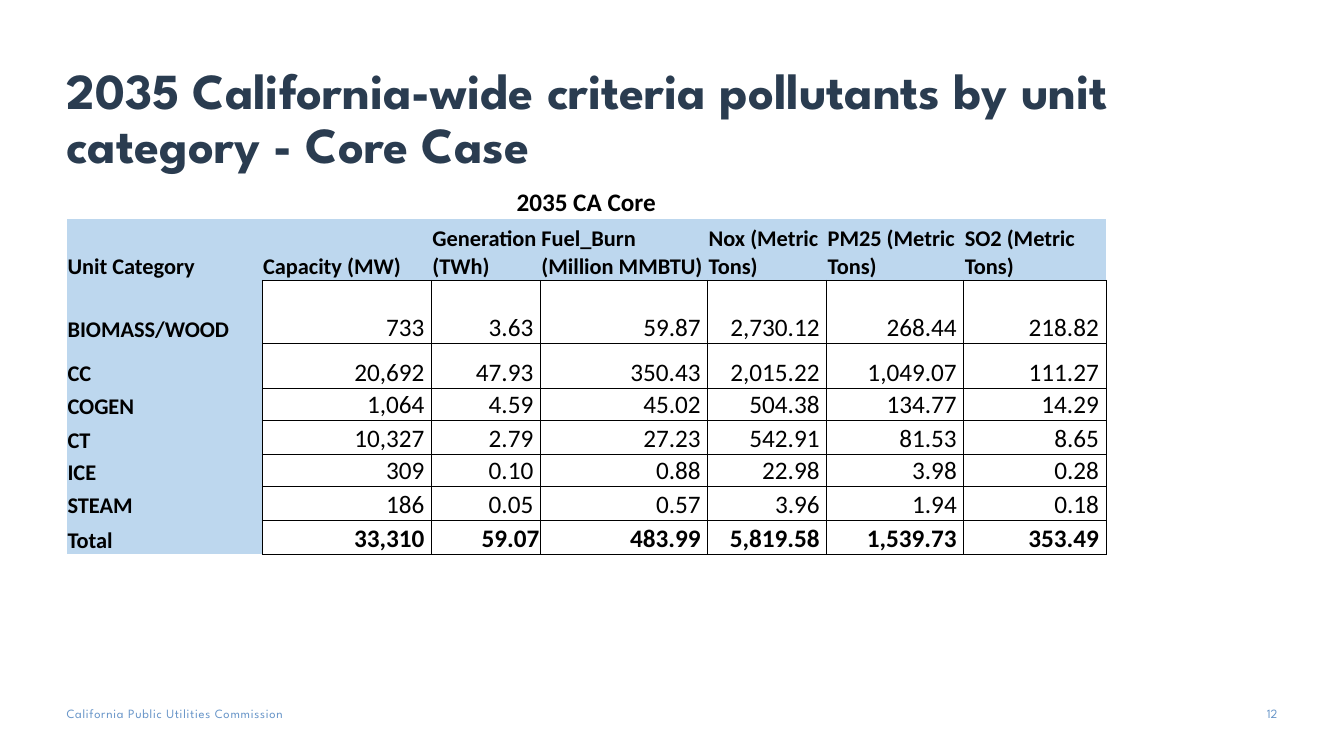
from dataclasses import dataclass

from lxml import etree
from pptx import Presentation
from pptx.dml.color import RGBColor
from pptx.enum import text as t
from pptx.oxml import ns
from pptx.util import Inches, Pt


@dataclass(frozen=True)
class Theme:
    heading_font: str = "League Spartan"
    table_font: str = "Calibri"
    navy: str = "2A3C50"
    footer_blue: str = "6996C9"
    header_blue: str = "BDD7EE"
    black: str = "000000"
    title_size: int = 36
    value_size: int = 18
    label_size: int = 16
    footer_size: int = 9
    border_width: float = 0.5


theme = Theme()


def style(para, name, size, color, bold=False):
    para.font.name = name
    para.font.size = Pt(size)
    para.font.bold = bold
    para.font.color.rgb = RGBColor.from_string(color)


def add_borders(cell):
    """Draw a thin line on all four sides; call before the cell is filled."""
    properties = cell._tc.get_or_add_tcPr()
    for side in ("lnL", "lnR", "lnT", "lnB"):
        line = etree.SubElement(properties, ns.qn(f"a:{side}"), w=str(Pt(theme.border_width)))
        fill = etree.SubElement(line, ns.qn("a:solidFill"))
        etree.SubElement(fill, ns.qn("a:srgbClr"), val=theme.black)


deck = Presentation()
deck.slide_width, deck.slide_height = Inches(13.33), Inches(7.5)
page = deck.slides.add_slide(deck.slide_layouts[6])

# Title
box = page.shapes.add_textbox(Inches(0.66), Inches(0.2), Inches(12.01), Inches(1.58))
frame = box.text_frame
frame.word_wrap = True
frame.vertical_anchor = t.MSO_ANCHOR.BOTTOM
frame.margin_left = 0
para = frame.paragraphs[0]
para.text = "2035 California-wide criteria pollutants by unit category - Core Case"
para.line_spacing = 0.9
style(para, theme.heading_font, theme.title_size, theme.navy, bold=True)

# Footer: text, left, width, alignment, letter spacing in hundredths of a point
footers = [
    ("California Public Utilities Commission", 0.66, 3.21, t.PP_ALIGN.LEFT, 50),
    ("12", 12.25, 0.42, t.PP_ALIGN.RIGHT, 0),
]
for words, left, width, alignment, spacing in footers:
    box = page.shapes.add_textbox(Inches(left), Inches(7), Inches(width), Inches(0.15))
    frame = box.text_frame
    frame.word_wrap = True
    frame.margin_left = frame.margin_right = frame.margin_top = frame.margin_bottom = 0
    para = frame.paragraphs[0]
    span = para.add_run()
    span.text = words
    span._r.get_or_add_rPr().set("spc", str(spacing))
    para.alignment = alignment
    style(para, theme.heading_font, theme.footer_size, theme.footer_blue)

# Table
rows = [
    ["2035 CA Core"] + [""] * 6,
    ["Unit Category", "Capacity (MW)", "Generation (TWh)", "Fuel_Burn (Million MMBTU)",
     "Nox (Metric Tons)", "PM25 (Metric Tons)", "SO2 (Metric Tons)"],
    ["BIOMASS/WOOD", "733", "3.63", "59.87", "2,730.12", "268.44", "218.82"],
    ["CC", "20,692", "47.93", "350.43", "2,015.22", "1,049.07", "111.27"],
    ["COGEN", "1,064", "4.59", "45.02", "504.38", "134.77", "14.29"],
    ["CT", "10,327", "2.79", "27.23", "542.91", "81.53", "8.65"],
    ["ICE", "309", "0.10", "0.88", "22.98", "3.98", "0.28"],
    ["STEAM", "186", "0.05", "0.57", "3.96", "1.94", "0.18"],
    ["Total", "33,310", "59.07", "483.99", "5,819.58", "1,539.73", "353.49"],
]
column_widths = [1.94, 1.68, 1.08, 1.66, 1.18, 1.36, 1.41]
row_heights = [0.34, 0.61, 0.63, 0.44, 0.32, 0.34, 0.32, 0.33, 0.34]
total_row = len(rows) - 1
flush_cell = (total_row, 2)

table_frame = page.shapes.add_table(
    len(rows), len(column_widths), Inches(0.66), Inches(1.83),
    Inches(sum(column_widths)), Inches(sum(row_heights)))
table = table_frame.table
table.first_row = table.horz_banding = False
style_id = table._tbl.tblPr.find(ns.qn("a:tableStyleId"))
style_id.text = "{2D5ABB26-0587-4C30-8999-92F81FD0307C}"  # no style, no grid
for column, width in zip(table.columns, column_widths):
    column.width = Inches(width)
for row, height in zip(table.rows, row_heights):
    row.height = Inches(height)
table.cell(0, 0).merge(table.cell(0, len(column_widths) - 1))

for r, words in enumerate(rows):
    for c, word in enumerate(words):
        cell = table.cell(r, c)
        is_caption = r == 0
        is_value = r > 1 and c > 0
        cell.vertical_anchor = t.MSO_ANCHOR.BOTTOM
        cell.margin_left = cell.margin_top = cell.margin_right = Inches(0.01)
        cell.margin_bottom = 0
        para = cell.text_frame.paragraphs[0]
        para.text = word
        size = theme.value_size if is_caption or is_value else theme.label_size
        style(para, theme.table_font, size, theme.black, bold=not is_value or r == total_row)
        if is_caption:
            para.alignment = t.PP_ALIGN.CENTER
        elif is_value:
            para.alignment = t.PP_ALIGN.RIGHT
            if (r, c) != flush_cell:
                cell.margin_right = Inches(0.07)
            add_borders(cell)
        if is_caption or is_value:
            cell.fill.background()
        else:
            cell.fill.solid()
            cell.fill.fore_color.rgb = RGBColor.from_string(theme.header_blue)

deck.save("out.pptx")
